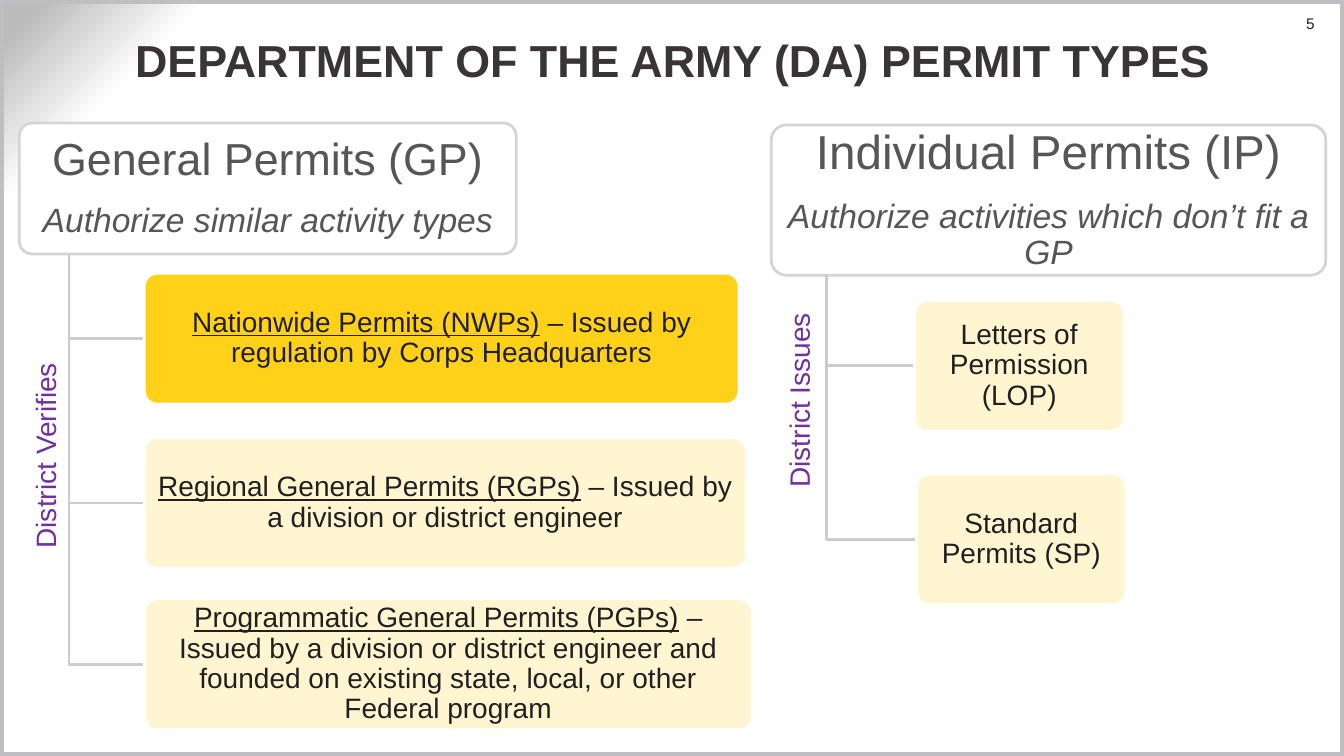
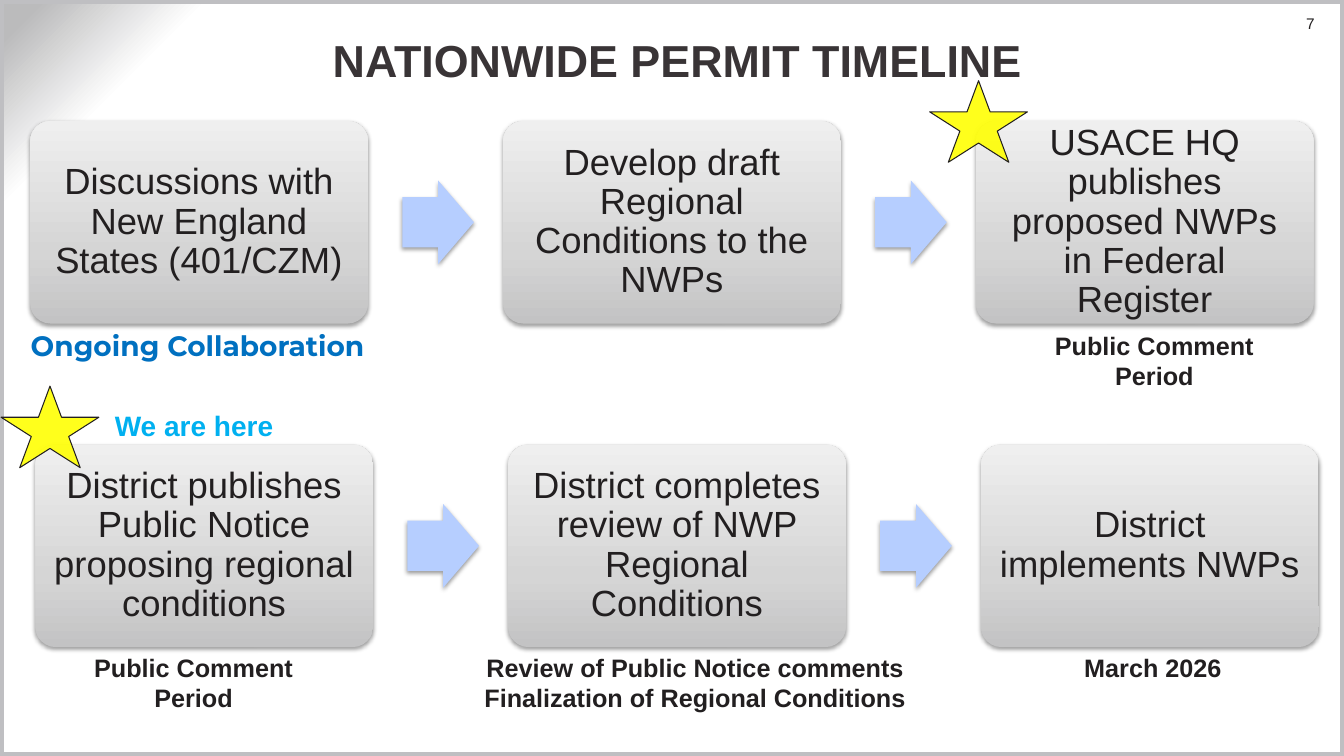
import pptx
import pptx.util
import pptx.oxml
import pptx.oxml.ns
import pptx.dml.color
import pptx.enum.shapes
import pptx.enum.text

Pt = pptx.util.Pt
Inches = pptx.util.Inches
RGB = pptx.dml.color.RGBColor
MSO = pptx.enum.shapes.MSO_SHAPE
ALIGN = pptx.enum.text.PP_ALIGN
ANCHOR = pptx.enum.text.MSO_ANCHOR
qn = pptx.oxml.ns.qn
parse_xml = pptx.oxml.parse_xml
NS = pptx.oxml.ns.nsdecls("a")

INK = RGB(0x22, 0x1F, 0x20)
TITLE = RGB(0x39, 0x34, 0x36)
HEADING = RGB(0x56, 0x55, 0x57)
FRAME = RGB(0xBF, 0xBF, 0xC2)
HEAD_LINE = RGB(0xD5, 0xD5, 0xD7)
ELBOW = RGB(0xCC, 0xCC, 0xCC)
WHITE = RGB(0xFF, 0xFF, 0xFF)
GOLD = RGB(0xFF, 0xCC, 0x01)
CREAM = RGB(0xFF, 0xF5, 0xCC)
PURPLE = RGB(0x70, 0x30, 0xA0)
ARROW = RGB(0xB6, 0xCE, 0xFF)
YELLOW = RGB(0xFF, 0xFF, 0x00)
BLUE = RGB(0x00, 0x70, 0xC0)
SKY = RGB(0x00, 0xB0, 0xF0)

BACKDROP = f'''<a:gradFill {NS} rotWithShape="1"><a:gsLst>
<a:gs pos="87000"><a:srgbClr val="FFFFFF"/></a:gs>
<a:gs pos="90000"><a:srgbClr val="FFFFFF"/></a:gs>
<a:gs pos="98000"><a:srgbClr val="BBBBBC"/></a:gs></a:gsLst>
<a:path path="circle"><a:fillToRect l="100000" t="100000"/></a:path></a:gradFill>'''
CARD_FILL = f'''<a:gradFill {NS} rotWithShape="1"><a:gsLst>
<a:gs pos="0"><a:srgbClr val="C3C3C4"/></a:gs>
<a:gs pos="35000"><a:srgbClr val="D5D5D5"/></a:gs>
<a:gs pos="100000"><a:srgbClr val="EFEFEF"/></a:gs></a:gsLst>
<a:lin ang="16200000" scaled="0"/></a:gradFill>'''
SHADOW = f'''<a:outerShdw {NS} blurRad="40000" dist="20000" dir="5400000" rotWithShape="0">
<a:srgbClr val="000000"><a:alpha val="38000"/></a:srgbClr></a:outerShdw>'''

prs = pptx.Presentation()
prs.slide_width = Inches(13.33)
prs.slide_height = Inches(7.5)
COL = prs.slide_width / 100
ROW = prs.slide_height / 100


def add_box(s, kind, x, y, w, h, fill=None, alpha=None, line=None, width=2):
    area = [int(v) for v in (x * COL, y * ROW, w * COL, h * ROW)]
    if kind is None:
        return s.shapes.add_textbox(*area)
    sp = s.shapes.add_shape(kind, *area)
    sp.shadow.inherit = False
    if kind == MSO.ROUNDED_RECTANGLE:
        sp.adjustments[0] = 0.1
    if fill is None:
        sp.fill.background()
    else:
        sp.fill.solid()
        sp.fill.fore_color.rgb = fill
    if alpha:
        clr = sp.element.spPr.find(qn("a:solidFill")).find(qn("a:srgbClr"))
        clr.append(parse_xml(f'<a:alpha {NS} val="{alpha * 1000}"/>'))
    if line is None:
        sp.line.fill.background()
    else:
        sp.line.color.rgb = line
        sp.line.width = Pt(width)
    return sp


def write(sp, lines, size, color=INK, bold=False, align=ALIGN.CENTER, anchor=ANCHOR.MIDDLE,
          inset=(0.1, 0.05), spacing=None, face="Arial"):
    tf = sp.text_frame
    tf.word_wrap = True
    tf.vertical_anchor = anchor
    tf.margin_left = tf.margin_right = Inches(inset[0])
    tf.margin_top = tf.margin_bottom = Inches(inset[1])
    for i, text in enumerate(lines):
        p = tf.add_paragraph() if i else tf.paragraphs[0]
        p.add_run().text = text
        p.alignment = align
        p.line_spacing = spacing
        p.font.name = face
        p.font.size = Pt(size)
        p.font.bold = bold
        p.font.color.rgb = color
    return tf


master = prs.slide_master
master.background.fill.solid()
bg_fill = next(master.element.iter(qn("p:bgPr"))).find(qn("a:solidFill"))
bg_fill.getparent().replace(bg_fill, parse_xml(BACKDROP))

slides = []
for number, title, x, w in [("5", "DEPARTMENT OF THE ARMY (DA) PERMIT TYPES", 8.1, 83.95),
                            ("7", "NATIONWIDE PERMIT TIMELINE", 7.8, 85.22)]:
    s = prs.slides.add_slide(prs.slide_layouts[6])
    tf = write(add_box(s, None, 93.32, 1.87, 4.5, 2.53), [number], 11,
               align=ALIGN.RIGHT, anchor=ANCHOR.TOP, inset=(0, 0))
    add_box(s, MSO.RECTANGLE, 0, 0, 100, 100, line=FRAME, width=6)
    write(add_box(s, None, x, 1.87, w, 12.13), [title], 32, TITLE, True, inset=(0.05, 0))
    slides.append(s)

types, timeline = slides

CHILD_H = 17.33
branches = [
    ("General Permits (GP)", "Authorize similar activity types", 32, (1.43, 16.27, 36.98, 17.33), [
        ("Nationwide Permits (NWPs)", " – Issued by regulation by Corps Headquarters",
         10.73, 36.13, 44.26, GOLD),
        ("Regional General Permits (RGPs)", " – Issued by a division or district engineer",
         10.73, 57.87, 44.79, CREAM),
        ("Programmatic General Permits (PGPs)",
         " – Issued by a division or district engineer and founded on existing state, "
         "local, or other Federal program", 10.73, 79.2, 45.24, CREAM)]),
    ("Individual Permits (IP)", "Authorize activities which don’t fit a GP", 34,
     (57.39, 16.53, 41.26, 19.87), [
         ("Letters of Permission (LOP)", None, 68.04, 39.73, 15.6, CREAM),
         ("Standard Permits (SP)", None, 68.19, 62.67, 15.6, CREAM)]),
]
for heading, note, size, (hx, hy, hw, hh), children in branches:
    sp = add_box(types, MSO.ROUNDED_RECTANGLE, hx, hy, hw, hh, WHITE, line=HEAD_LINE)
    tf = write(sp, [heading, note], size, HEADING, inset=(0.07, 0.04), spacing=0.9)
    tf.paragraphs[0].space_after = Pt(round(size * 0.4))
    tf.paragraphs[1].font.size = Pt(24)
    tf.paragraphs[1].font.italic = True
    trunk = int((hx + hw / 10) * COL)
    for name, detail, x, y, w, fill in children:
        middle = int((y + CHILD_H / 2) * ROW)
        fb = types.shapes.build_freeform(trunk, int((hy + hh) * ROW))
        fb.add_line_segments([(trunk, middle), (int(x * COL), middle)], close=False)
        elbow = fb.convert_to_shape()
        elbow.shadow.inherit = False
        elbow.fill.background()
        elbow.line.color.rgb = ELBOW
        elbow.line.width = Pt(2)
        sp = add_box(types, MSO.ROUNDED_RECTANGLE, x, y, w, CHILD_H, fill, 90, WHITE)
        p = write(sp, [name], 20, inset=(0.04, 0.03), spacing=0.9).paragraphs[0]
        if detail:
            p.runs[0].font.underline = True
            p.add_run().text = detail

for label, x, y, w in [("District Verifies", -5.85, 54.53, 18.45),
                       ("District Issues", 49.36, 44.93, 20.18)]:
    sp = add_box(types, None, x, y, w, 5.87)
    sp.rotation = 270
    write(sp, [label], 20, PURPLE, align=ALIGN.LEFT, anchor=ANCHOR.TOP)

CARD_W, CARD_H, STEP = 25.13, 26.8, 35.18
ARROW_W, ARROW_H, ARROW_DX = 5.33, 11.07, 27.68
steps = [
    (2.25, 16, ["Discussions with New England States (401/CZM)",
                "Develop draft Regional Conditions to the NWPs",
                "USACE HQ publishes proposed NWPs in Federal Register"]),
    (2.63, 58.8, ["District publishes Public Notice proposing regional conditions",
                  "District completes review of NWP Regional Conditions",
                  "District implements NWPs"]),
]
for left, y, texts in steps:
    for i, text in enumerate(texts):
        x = left + i * STEP
        card = add_box(timeline, MSO.ROUNDED_RECTANGLE, x, y, CARD_W, CARD_H, WHITE)
        solid = card.element.spPr.find(qn("a:solidFill"))
        solid.getparent().replace(solid, parse_xml(CARD_FILL))
        write(card, [text], 26, inset=(0.11, 0.11), spacing=0.9)
        raised = [card]
        if i < len(texts) - 1:
            arrow = add_box(timeline, MSO.RIGHT_ARROW, x + ARROW_DX, y + (CARD_H - ARROW_H) / 2,
                            ARROW_W, ARROW_H, ARROW)
            arrow.adjustments[0] = 0.6
            arrow.adjustments[1] = 0.5
            raised.append(arrow)
        for sp in raised:
            sp.element.spPr.find(qn("a:effectLst")).append(parse_xml(SHADOW))

for x, y in [(69.17, 10.67), (0.08, 51.07)]:
    add_box(timeline, MSO.STAR_5_POINT, x, y, 7.28, 10.8, YELLOW, 89, INK, 0.75)

captions = [
    (["Public Comment Period"], 75.09, 43.07, 21.6, 9.47),
    (["Public Comment Period"], 3.75, 85.6, 21.3, 9.47),
    (["Review of Public Notice comments", "Finalization of Regional Conditions"],
     32.71, 85.6, 38.03, 9.47),
    (["March 2026"], 73.74, 85.6, 24.08, 5.33),
]
for lines, x, y, w, h in captions:
    write(add_box(timeline, None, x, y, w, h), lines, 18, bold=True, anchor=ANCHOR.TOP)
write(add_box(timeline, None, 0, 42.8, 29.41, 5.87), ["Ongoing Collaboration"], 20, BLUE, True,
      anchor=ANCHOR.TOP, face="Montserrat")
write(add_box(timeline, None, 7.8, 53.33, 15.38, 5.87), ["We are here"], 20, SKY, True,
      align=ALIGN.LEFT, anchor=ANCHOR.TOP)

prs.save("out.pptx")
